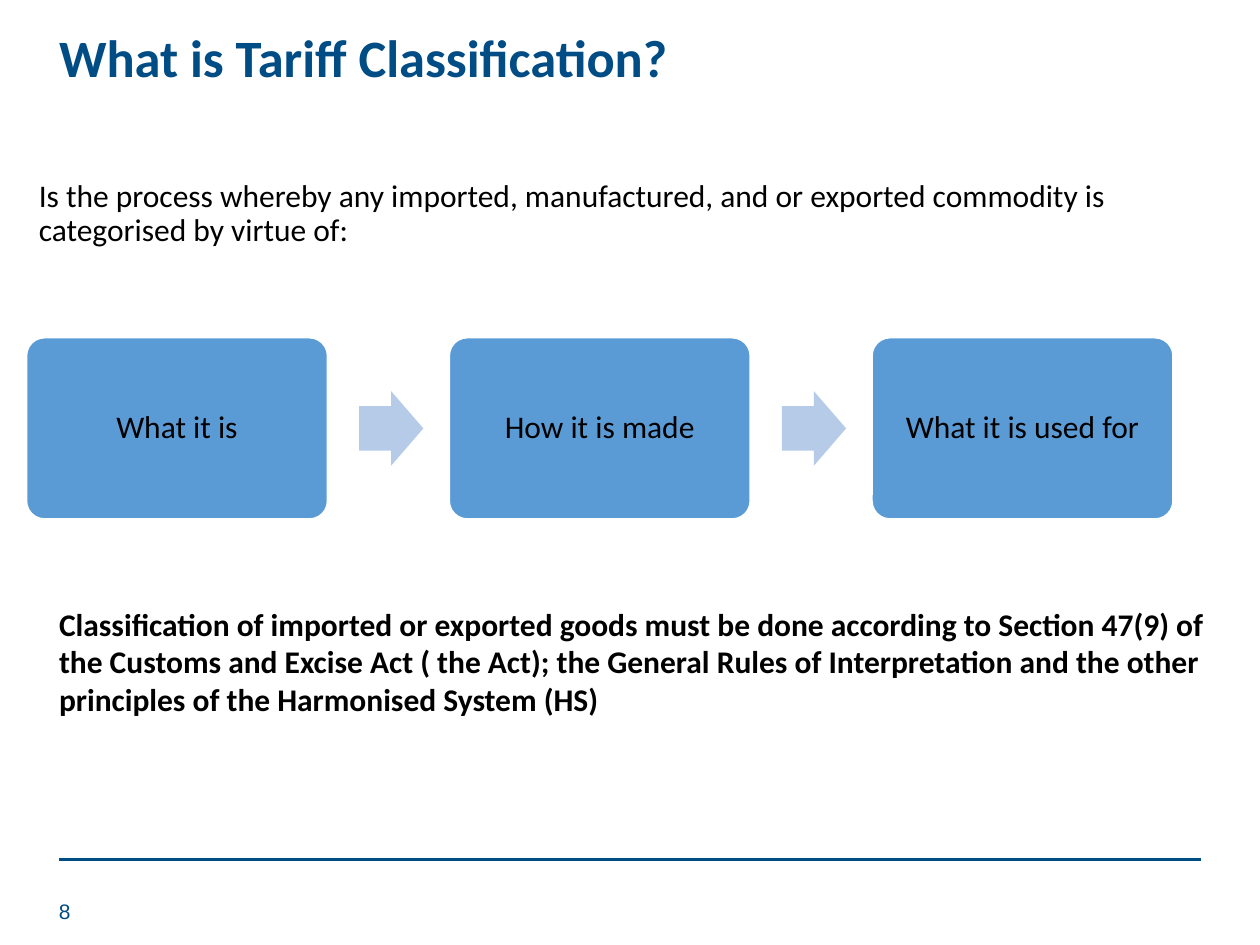
from lxml import etree
from pptx import Presentation
from pptx.dml.color import RGBColor
from pptx.enum.shapes import MSO_CONNECTOR as Connector, MSO_SHAPE as Shape
from pptx.enum.text import MSO_ANCHOR as Anchor, PP_ALIGN as Align
from pptx.oxml.ns import qn
from pptx.util import Inches, Pt

COLORS = {"navy": "004C85", "step": "5B9BD5", "arrow": "B5CBE7",
          "white": "FFFFFF", "black": "000000"}
STEPS = ["What it is", "How it is made", "What it is used for"]


def color(name):
    """Return the named colour."""
    return RGBColor.from_string(COLORS[name])


def write(shape, text, size=18, font="Calibri", ink="black", bold=False,
          spacing=1.0, align=Align.LEFT, anchor=Anchor.TOP):
    """Put one formatted paragraph into a shape."""
    frame = shape.text_frame
    frame.word_wrap = True
    frame.vertical_anchor = anchor
    paragraph = frame.paragraphs[0]
    paragraph.text = text
    paragraph.alignment = align
    paragraph.line_spacing = spacing
    paragraph.font.size = Pt(size)
    paragraph.font.name = font
    paragraph.font.bold = bold
    paragraph.font.color.rgb = color(ink)


def add_text(slide, box, text, **style):
    """Add a text box at (left, top, width, height) in inches."""
    write(slide.shapes.add_textbox(*map(Inches, box)), text, **style)


def add_block(slide, kind, box, fill):
    """Add a filled preset shape without outline or shadow."""
    shape = slide.shapes.add_shape(kind, *map(Inches, box))
    shape.shadow.inherit = False
    shape.fill.solid()
    shape.fill.fore_color.rgb = color(fill)
    shape.line.fill.background()
    return shape


def add_process(slide, box, steps):
    """Spread the steps across the box with an arrow in each gap."""
    left, top, width, height = box
    step_width, arrow_width, arrow_height = 2.39, 0.51, 0.59
    pitch = (width - step_width) / (len(steps) - 1)
    for index, label in enumerate(steps):
        step_left = left + index * pitch
        step = add_block(slide, Shape.ROUNDED_RECTANGLE,
                         (step_left, top, step_width, height), "step")
        step.adjustments[0] = 0.1
        step.line.color.rgb = color("white")
        step.line.width = Pt(1)
        write(step, label, spacing=0.9, align=Align.CENTER, anchor=Anchor.MIDDLE)
        if index < len(steps) - 1:
            arrow = add_block(slide, Shape.RIGHT_ARROW,
                              (step_left + step_width + 0.25,
                               top + (height - arrow_height) / 2,
                               arrow_width, arrow_height), "arrow")
            arrow.adjustments[0] = 0.6
            arrow.adjustments[1] = 0.5


def add_footer(slide, box, number):
    """Draw the rule along the top of the box and the page number below."""
    left, top, width, height = box
    rule = slide.shapes.add_connector(
        Connector.STRAIGHT, Inches(left), Inches(top), Inches(left + width), Inches(top))
    rule.line.color.rgb = color("navy")
    rule.line.width = Pt(2)
    etree.SubElement(rule._element.spPr, qn("a:effectLst"))
    add_text(slide, (left - 0.1, top + height - 0.4, 0.46, 0.4), number,
             size=12, font="Arial", ink="navy", anchor=Anchor.MIDDLE)


def main():
    """Build and save the slide."""
    presentation = Presentation()
    presentation.slide_width = Inches(10)
    presentation.slide_height = Inches(7.5)
    slide = presentation.slides.add_slide(presentation.slide_layouts[6])
    add_footer(slide, (0.47, 6.82, 9.06, 0.61), "8")
    add_text(slide, (0.37, 0.21, 8.62, 0.58), "What is Tariff Classification?",
             size=30, ink="navy", bold=True, spacing=0.9)
    add_process(slide, (0.21, 2.68, 9.1, 1.44), STEPS)
    add_text(slide, (0.21, 1.38, 9.5, 0.65),
             "Is the process whereby any imported, manufactured, and or exported "
             "commodity is categorised by virtue of:", spacing=0.9)
    add_text(slide, (0.37, 4.75, 9.41, 1.0),
             "Classification of imported or exported goods must be done according to "
             "Section 47(9) of the Customs and Excise Act ( the Act); the General Rules "
             "of Interpretation and the other principles of the Harmonised System (HS)",
             bold=True)
    presentation.save("out.pptx")


if __name__ == "__main__":
    main()
